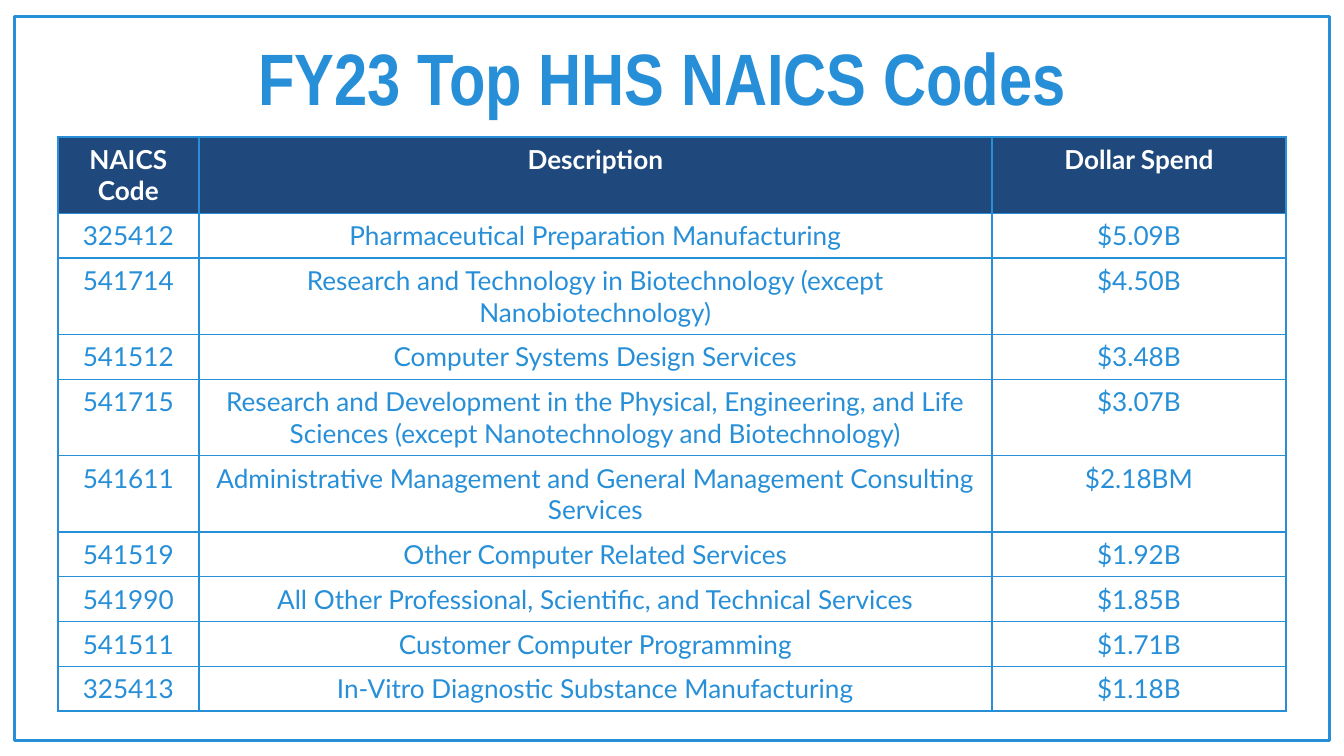
from lxml import etree
from pptx import Presentation
from pptx.dml.color import RGBColor
from pptx.enum.shapes import MSO_SHAPE
from pptx.enum.text import MSO_ANCHOR, PP_ALIGN
from pptx.oxml.ns import qn
from pptx.util import Inches, Pt

RECTANGLE = MSO_SHAPE.RECTANGLE
TOP = MSO_ANCHOR.TOP
CENTER = PP_ALIGN.CENTER
COLORS = {"blue": "278FD8", "navy": "1F497D", "white": "FFFFFF"}
COLUMN_WIDTHS = [1.05, 5.9, 2.19]
ONE_LINE, TWO_LINES = 0.31, 0.54

ROWS = [
    (TWO_LINES, "NAICS Code", "Description", "Dollar Spend"),
    (ONE_LINE, "325412", "Pharmaceutical Preparation Manufacturing", "$5.09B"),
    (TWO_LINES, "541714", "Research and Technology in Biotechnology (except Nanobiotechnology)", "$4.50B"),
    (ONE_LINE, "541512", "Computer Systems Design Services", "$3.48B"),
    (TWO_LINES, "541715", "Research and Development in the Physical, Engineering, and Life Sciences "
     "(except Nanotechnology and Biotechnology)", "$3.07B"),
    (TWO_LINES, "541611", "Administrative Management and General Management Consulting Services", "$2.18BM"),
    (ONE_LINE, "541519", "Other Computer Related Services", "$1.92B"),
    (ONE_LINE, "541990", "All Other Professional, Scientific, and Technical Services", "$1.85B"),
    (ONE_LINE, "541511", "Customer Computer Programming", "$1.71B"),
    (ONE_LINE, "325413", "In-Vitro Diagnostic Substance Manufacturing", "$1.18B"),
]


def write_text(text_frame, text, font="Lato", size=14, color="blue", bold=False):
    paragraph = text_frame.paragraphs[0]
    paragraph.alignment = CENTER
    run = paragraph.add_run()
    run.text = text
    run.font.name = font
    run.font.size = Pt(size)
    run.font.bold = bold
    run.font.color.rgb = RGBColor.from_string(COLORS[color])


def set_borders(cell, color, width):
    properties = cell._tc.get_or_add_tcPr()
    for position, side in enumerate(("a:lnL", "a:lnR", "a:lnT", "a:lnB")):
        line = etree.Element(qn(side), w=str(Pt(width)))
        fill = etree.SubElement(line, qn("a:solidFill"))
        etree.SubElement(fill, qn("a:srgbClr"), val=COLORS[color])
        properties.insert(position, line)


presentation = Presentation()
presentation.slide_width = Inches(10)
presentation.slide_height = presentation.slide_width * 9 // 16
slide = presentation.slides.add_slide(presentation.slide_layouts[6])

frame = slide.shapes.add_shape(RECTANGLE, Inches(0.11), Inches(0.12), Inches(9.78), Inches(5.39))
frame.shadow.inherit = False
frame.fill.background()
frame.line.color.rgb = RGBColor.from_string(COLORS["blue"])
frame.line.width = Pt(1.5)

title = slide.shapes.add_textbox(Inches(0.22), Inches(0.14), Inches(9.54), Inches(0.77))
title_frame = title.text_frame
title_frame.word_wrap = True
title_frame.vertical_anchor = TOP
title_frame.margin_left = title_frame.margin_right = Inches(0.1)
title_frame.margin_top = title_frame.margin_bottom = Inches(0.1)
write_text(title_frame, "FY23 Top HHS NAICS Codes ", font="Arial Narrow", size=39, bold=True)

table = slide.shapes.add_table(
    len(ROWS), len(COLUMN_WIDTHS), Inches(0.43), Inches(1.02), Inches(9.13), Inches(4.27)
).table
table.horz_banding = False
for column, width in zip(table.columns, COLUMN_WIDTHS):
    column.width = Inches(width)

for row_index, (height, *texts) in enumerate(ROWS):
    is_header = row_index == 0
    table.rows[row_index].height = Inches(height)
    for column_index, text in enumerate(texts):
        cell = table.cell(row_index, column_index)
        if is_header:
            cell.fill.solid()
            cell.fill.fore_color.rgb = RGBColor.from_string(COLORS["navy"])
        else:
            cell.fill.background()
        set_borders(cell, "blue", 1)
        write_text(cell.text_frame, text, color="white" if is_header else "blue", bold=is_header)

presentation.save("out.pptx")
